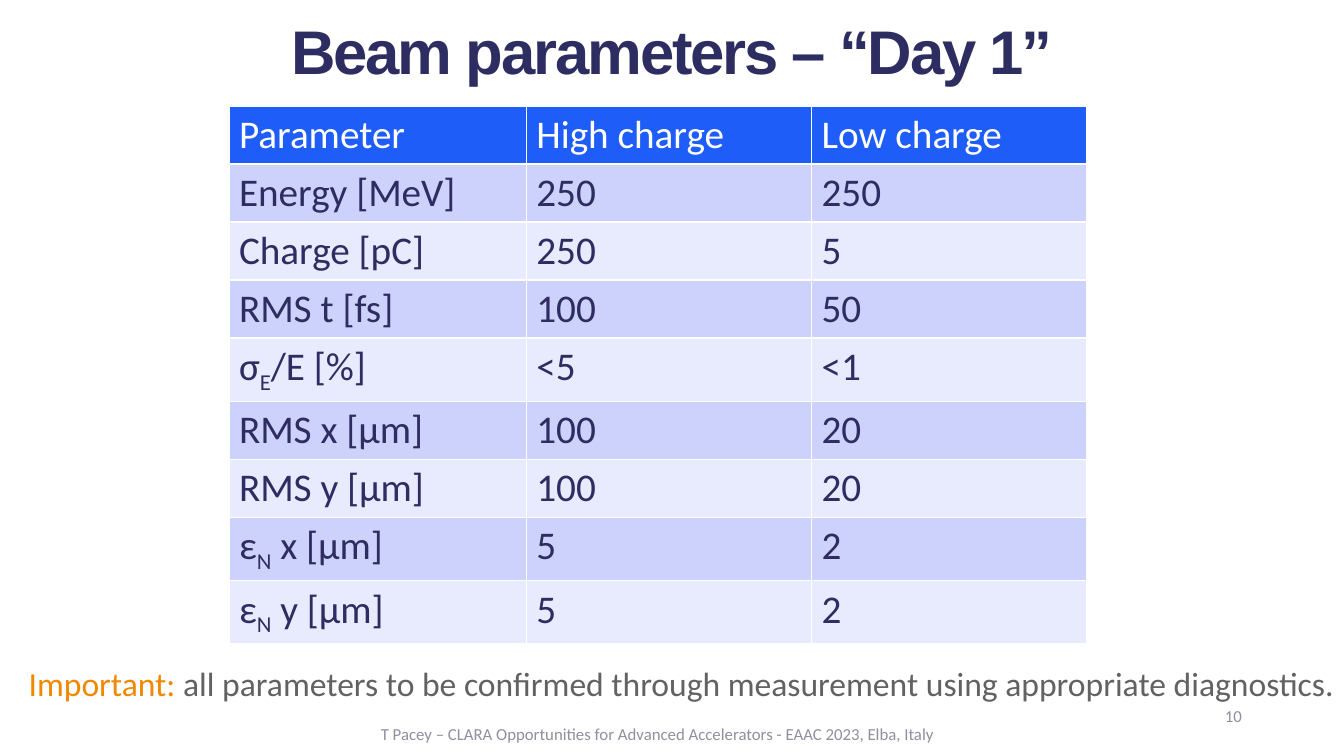
from dataclasses import dataclass

import pptx
import pptx.dml.color
import pptx.enum.text
import pptx.util

Cm = pptx.util.Cm
Pt = pptx.util.Pt
ALIGN = pptx.enum.text.PP_ALIGN
ANCHOR = pptx.enum.text.MSO_ANCHOR


@dataclass(frozen=True)
class Theme:
    """Colours, fonts and type sizes of the slide."""
    heading_font: str = "Arial"
    body_font: str = "Calibri"
    heading: str = "2E2D62"
    cell_text: str = "2E2C61"
    white: str = "FFFFFF"
    header_fill: str = "1E5DF8"
    bands: tuple = ("CDD2FC", "E8EAFE")
    accent: str = "F08900"
    note: str = "626262"
    footer: str = "8F8F9E"
    heading_size: int = 44
    table_size: int = 28
    note_size: int = 24
    footer_size: int = 12


THEME = Theme()

PARAMETERS = [
    ("Parameter", "High charge", "Low charge"),
    ("Energy [MeV]", "250", "250"),
    ("Charge [pC]", "250", "5"),
    ("RMS t [fs]", "100", "50"),
    (("σ", "E", "/E [%]"), "<5", "<1"),
    ("RMS x [µm]", "100", "20"),
    ("RMS y [µm]", "100", "20"),
    (("ε", "N", " x [µm]"), "5", "2"),
    (("ε", "N", " y [µm]"), "5", "2"),
]


def rgb(value):
    """Return a colour object for a hex value."""
    return pptx.dml.color.RGBColor.from_string(value)


def style(paragraph, size, colour, family=THEME.body_font, bold=False):
    """Set the font shared by all runs of a paragraph."""
    font = paragraph.font
    font.name, font.size, font.bold = family, Pt(size), bold
    font.color.rgb = rgb(colour)


def add_title(slide, box, text):
    """Place the heading in the title placeholder."""
    title = slide.shapes.title
    title.left, title.top, title.width, title.height = box
    frame = title.text_frame
    frame.auto_size = pptx.enum.text.MSO_AUTO_SIZE.NONE
    frame.vertical_anchor = ANCHOR.MIDDLE
    heading = frame.paragraphs[0]
    heading.alignment = ALIGN.CENTER
    run = heading.add_run()
    run.text = text
    run._r.get_or_add_rPr().set("spc", "-150")
    style(heading, THEME.heading_size, THEME.heading, THEME.heading_font, True)


def fill_cell(cell, content, fill, colour):
    """Write a cell, lowering the middle part of a three-part symbol."""
    cell.fill.solid()
    cell.fill.fore_color.rgb = rgb(fill)
    paragraph = cell.text_frame.paragraphs[0]
    parts = (content,) if isinstance(content, str) else content
    for index, part in enumerate(parts):
        run = paragraph.add_run()
        run.text = part
        if index == 1:
            run._r.get_or_add_rPr().set("baseline", "-25000")
    style(paragraph, THEME.table_size, colour)


def add_parameters(slide, box, rows, column_shares):
    """Place the banded beam parameter table."""
    left, top, width, height = box
    table = slide.shapes.add_table(len(rows), len(rows[0]), *box).table
    for column, share in zip(table.columns, column_shares):
        column.width = int(width * share / sum(column_shares))
    for index, row in enumerate(rows):
        table.rows[index].height = height // len(rows)
        header = index == 0
        fill = THEME.header_fill if header else THEME.bands[(index - 1) % 2]
        colour = THEME.white if header else THEME.cell_text
        for column, content in enumerate(row):
            fill_cell(table.cell(index, column), content, fill, colour)


def add_line(slide, box, parts, size, align, anchor=ANCHOR.TOP):
    """Place one line of text made of (text, colour) parts."""
    frame = slide.shapes.add_textbox(*box).text_frame
    frame.word_wrap = True
    frame.vertical_anchor = anchor
    line = frame.paragraphs[0]
    line.alignment = align
    style(line, size, parts[-1][1])
    for text, colour in parts:
        run = line.add_run()
        run.text = text
        if len(parts) > 1:
            run.font.color.rgb = rgb(colour)


def add_footer(slide, box, credit, number):
    """Place the talk credit and the page number in the footer band."""
    left, top, width, height = box
    line_height = Cm(1.02)
    credit_width = Cm(14.71)
    add_line(slide, (left, top + height - line_height, credit_width, line_height),
             [(credit, THEME.footer)], THEME.footer_size, ALIGN.CENTER, ANCHOR.MIDDLE)
    add_line(slide, (left + credit_width, top, width - credit_width, line_height),
             [(number, THEME.footer)], THEME.footer_size, ALIGN.RIGHT)


def main():
    """Build the slide and save it."""
    deck = pptx.Presentation()
    deck.slide_width, deck.slide_height = Cm(33.87), Cm(19.05)
    slide = deck.slides.add_slide(deck.slide_layouts[5])
    add_title(slide, (Cm(0), Cm(0.18), deck.slide_width, Cm(2.13)),
              "Beam parameters – “Day 1”")
    add_parameters(slide, (Cm(5.77), Cm(2.67), Cm(21.62), Cm(12.96)),
                   PARAMETERS, (2.95, 2.83, 2.73))
    add_line(slide, (Cm(-2), Cm(16.59), Cm(35.87), Cm(1.27)),
             [("Important: ", THEME.accent),
              ("all parameters to be confirmed through measurement using "
               "appropriate diagnostics.", THEME.note)],
             THEME.note_size, ALIGN.RIGHT)
    add_footer(slide, (Cm(9.22), Cm(17.65), Cm(22.33), Cm(1.35)),
               "T Pacey – CLARA Opportunities for Advanced Accelerators - "
               "EAAC 2023, Elba, Italy", "10")
    deck.save("out.pptx")


if __name__ == "__main__":
    main()
